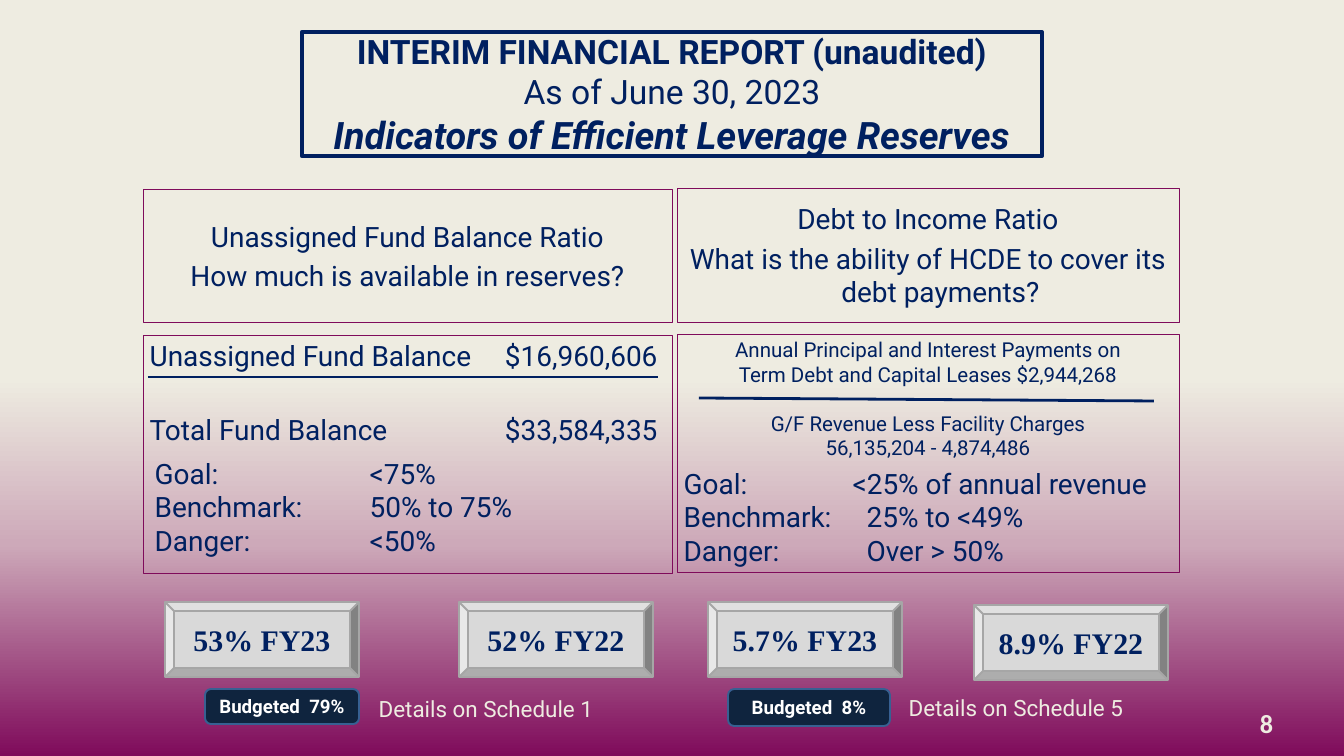
import copy
import pptx
import pptx.util
import pptx.dml.color
import pptx.enum.shapes
import pptx.enum.text
import pptx.oxml.ns
import lxml.etree

PX = 914400 / 67.2
NAVY, CREAM, PLUM = "002060", "EEECE1", "7F0B5B"
Pt = pptx.util.Pt
qn = pptx.oxml.ns.qn
rgb = pptx.dml.color.RGBColor.from_string
MSO = pptx.enum.shapes.MSO_SHAPE
ALIGN = pptx.enum.text.PP_ALIGN
ANCHOR = pptx.enum.text.MSO_ANCHOR


def add_box(kind, at, fill=None, line=None, width=0, anchor=ANCHOR.MIDDLE, inset=None):
    at = [round(v * PX) for v in at]
    if kind is None:
        sp = slide.shapes.add_textbox(*at)
    else:
        sp = slide.shapes.add_shape(kind, *at)
        sp.shadow.inherit = False
        sp.line.color.rgb = rgb(line)
        sp.line.width = Pt(width)
        if fill:
            sp.fill.solid()
            sp.fill.fore_color.rgb = rgb(fill)
        else:
            sp.fill.background()
    tf = sp.text_frame
    tf.word_wrap = True
    tf.vertical_anchor = anchor
    if inset is not None:
        for side in ("left", "top", "right", "bottom"):
            setattr(tf, "margin_" + side, inset)
    return tf


def write(tf, lines, size, color=NAVY, name="Roboto", align=ALIGN.CENTER, hang=0, **base):
    for i, (text, extra) in enumerate(lines):
        fmt = {"name": name, "size": Pt(size), **base, **extra}
        before = fmt.pop("before", 0)
        tab = fmt.pop("tab", None)
        p = tf.paragraphs[0] if i == 0 else tf.add_paragraph()
        p.alignment = align
        p.space_before = Pt(before)
        pPr = p._p.get_or_add_pPr()
        if hang:
            pPr.set("marL", str(round(hang * PX)))
            pPr.set("indent", str(round(-hang * PX)))
        if tab:
            tabs = lxml.etree.SubElement(pPr, qn("a:tabLst"))
            lxml.etree.SubElement(tabs, qn("a:tab"), pos=str(round(tab[0] * PX)), algn=tab[1])
        r = p.add_run()
        r.text = text
        r.font.color.rgb = rgb(color)
        for key, value in fmt.items():
            setattr(r.font, key, value)


prs = pptx.Presentation()
prs.slide_width = round(1344 * PX)
prs.slide_height = round(756 * PX)
slide = prs.slides.add_slide(prs.slide_layouts[6])

bg = slide.background.fill
bg.gradient()
bg.gradient_angle = 270
first = bg.gradient_stops[0]._gs
first.addnext(copy.deepcopy(first))
for stop, (position, color) in zip(bg.gradient_stops, [(0.5, CREAM), (0.72, "CDA9B9"), (1, PLUM)]):
    stop.position = position
    stop.color.rgb = rgb(color)

tf = add_box(MSO.RECTANGLE, (302, 32, 740, 124), line=NAVY, width=4.5, inset=0)
write(tf, [
    ("INTERIM FINANCIAL REPORT (unaudited)", {"bold": True}),
    ("As of June 30, 2023", {}),
    ("Indicators of Efficient Leverage Reserves", {"size": Pt(40.5), "bold": True, "italic": True}),
], 36)

for at, lines in [
    ((143, 189, 529, 133), ["Unassigned Fund Balance Ratio", "How much is available in reserves?"]),
    ((677, 188, 502, 134), ["Debt to Income Ratio",
                            "What is the ability of HCDE to cover its debt payments?"]),
]:
    tf = add_box(MSO.RECTANGLE, at, line=PLUM, width=0.75)
    write(tf, [(text, {"before": 6}) for text in lines], 30, hang=25)

tf = add_box(MSO.RECTANGLE, (143, 335, 529, 238), line=PLUM, width=0.75, anchor=ANCHOR.TOP)
write(tf, [
    ("Unassigned Fund Balance\t$16,960,606", {"tab": (508, "r")}),
    ("Total Fund Balance\t$33,584,335", {"tab": (508, "r"), "before": 43}),
], 30, align=ALIGN.LEFT)

tf = add_box(MSO.RECTANGLE, (677, 334, 502, 238), line=PLUM, width=0.75, anchor=ANCHOR.TOP)
write(tf, [
    ("Annual Principal and Interest Payments on", {}),
    ("Term Debt and Capital Leases $2,944,268", {}),
    ("G/F Revenue Less Facility Charges", {"before": 26}),
    ("56,135,204 - 4,874,486", {}),
], 22)

for left, top, text in [
    (165, 602, "53% FY23"),
    (459, 602, "52% FY22"),
    (708, 602, "5.7% FY23"),
    (974, 605, "8.9% FY22"),
]:
    tf = add_box(MSO.BEVEL, (left, top, 194, 75), "D9D9D9", "A6A6A6", 2)
    write(tf, [(text, {})], 32, name="Times New Roman", bold=True)

for at, text in [((205, 689, 154, 35), "Budgeted  79%"), ((728, 689, 162, 37), "Budgeted  8%")]:
    tf = add_box(MSO.ROUNDED_RECTANGLE, at, "0F243E", "376092", 2)
    write(tf, [(text, {})], 20, "FFFFFF", bold=True)

for at, text in [((372, 692, 234, 34), "Details on Schedule 1"),
                 ((902, 691, 257, 34), "Details on Schedule 5")]:
    tf = add_box(None, at, anchor=ANCHOR.TOP)
    write(tf, [(text, {})], 24, CREAM, align=ALIGN.LEFT)

for at, rows in [
    ((148, 453, 529, 109), [("Goal:", "<75%", 215), ("Benchmark:", "50% to 75%", 215),
                            ("Danger:", "<50%", 215)]),
    ((677, 463, 504, 109), [("Goal:", "<25% of annual revenue", 169), ("Benchmark:", "25% to <49%", 183),
                            ("Danger:", "Over > 50%", 183)]),
]:
    tf = add_box(None, at, anchor=ANCHOR.TOP)
    write(tf, [(label + "\t" + value, {"tab": (tab, "l")}) for label, value, tab in rows],
          30, align=ALIGN.LEFT)

for ends in [(148, 377, 658, 377), (699, 398, 1154, 401)]:
    line = slide.shapes.add_connector(pptx.enum.shapes.MSO_CONNECTOR.STRAIGHT, *[round(v * PX) for v in ends])
    line.line.color.rgb = rgb(NAVY)
    line.line.width = Pt(3)
    lxml.etree.SubElement(line._element.spPr, qn("a:effectLst"))

tf = add_box(None, (1245, 707, 28, 32), anchor=ANCHOR.TOP, inset=0)
write(tf, [("8", {})], 28, CREAM, name="Calibri", align=ALIGN.RIGHT, bold=True)

prs.save("out.pptx")
